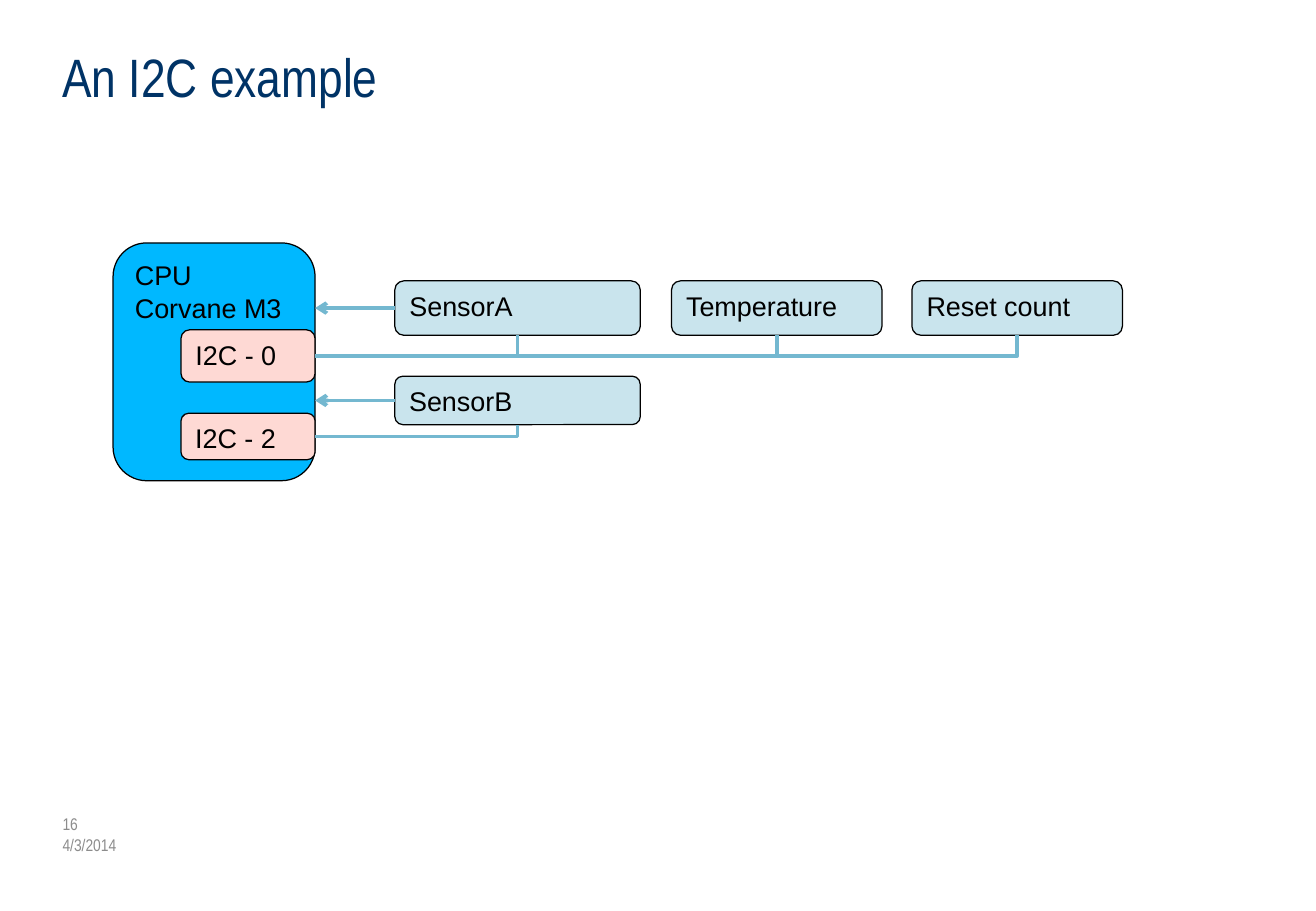
from lxml import etree
from pptx import Presentation
from pptx import util as u
from pptx.dml.color import RGBColor
from pptx.enum import shapes, text
from pptx.oxml import ns

NAVY = RGBColor(0x00, 0x33, 0x66)
GREY = RGBColor(0x8C, 0x8C, 0x8C)
BLACK = RGBColor(0x00, 0x00, 0x00)
CPU_BLUE = RGBColor(0x00, 0xB8, 0xFF)
DEVICE_BLUE = RGBColor(0xC9, 0xE4, 0xED)
PORT_PINK = RGBColor(0xFE, 0xD9, 0xD4)
WIRE_BLUE = RGBColor(0x74, 0xB8, 0xD0)

deck = Presentation()
deck.slide_width, deck.slide_height = u.Pt(780), u.Pt(540)
page = deck.slides.add_slide(deck.slide_layouts[6])


def write(box, lines, anchor, font, spacing=None):
    frame = box.text_frame
    frame.word_wrap = True
    frame.vertical_anchor = anchor
    for index, line in enumerate(lines):
        para = frame.paragraphs[0] if index == 0 else frame.add_paragraph()
        para.alignment = text.PP_ALIGN.LEFT
        para.line_spacing = spacing
        span = para.add_run()
        span.text = line
        span.font.color.rgb = font["color"]
        for name in ("name", "size"):
            setattr(span.font, name, font[name])


def wire(kind, start, end):
    line = page.shapes.add_connector(kind, *map(u.Pt, start + end))
    line.line.color.rgb = WIRE_BLUE
    line.line.width = u.Pt(2.25)
    etree.SubElement(line._element.spPr, ns.qn("a:effectLst"))
    return line


title_font = {"name": "Arial Narrow", "size": u.Pt(32), "color": NAVY}
footer_font = {"name": "Arial Narrow", "size": u.Pt(10), "color": GREY}
label_font = {"name": "Arial", "size": u.Pt(16), "color": BLACK}

for lines, place, font, spacing in (
    (["An I2C example"], (30, 21, 720, 53), title_font, 0.9),
    (["16", "4/3/2014"], (30, 476.6, 156, 36), footer_font, None),
):
    box = page.shapes.add_textbox(*map(u.Pt, place))
    write(box, lines, text.MSO_ANCHOR.MIDDLE, font, spacing)

cpu = (67, 144, 119.75, 141)
sensor_a = (234, 166.5, 145.5, 32.25)
sensor_b = (234, 223, 145.5, 28.75)
temperature = (398, 166.5, 124.75, 32.25)
reset_count = (540.5, 166.5, 124.75, 32.25)
port_0 = (107.25, 195.5, 79.5, 31)
port_2 = (107.25, 245, 79.5, 27.5)

for lines, place, color in (
    (["CPU", "Corvane M3"], cpu, CPU_BLUE),
    (["SensorA"], sensor_a, DEVICE_BLUE),
    (["SensorB"], sensor_b, DEVICE_BLUE),
    (["Temperature"], temperature, DEVICE_BLUE),
    (["Reset count"], reset_count, DEVICE_BLUE),
    (["I2C - 0"], port_0, PORT_PINK),
    (["I2C - 2"], port_2, PORT_PINK),
):
    box = page.shapes.add_shape(shapes.MSO_SHAPE.ROUNDED_RECTANGLE, *map(u.Pt, place))
    box.shadow.inherit = False
    box.fill.solid()
    box.fill.fore_color.rgb = color
    box.line.color.rgb = BLACK
    box.line.width = u.Pt(0.75)
    write(box, lines, text.MSO_ANCHOR.TOP, label_font)

for port, device in (
    (port_0, sensor_a),
    (port_0, reset_count),
    (port_0, temperature),
    (port_2, sensor_b),
):
    start = (port[0] + port[2], port[1] + port[3] / 2)
    end = (device[0] + device[2] / 2, device[1] + device[3])
    bus = wire(shapes.MSO_CONNECTOR.ELBOW, start, end)
    bus._element.spPr.find(ns.qn("a:prstGeom")).set("prst", "bentConnector2")

for left, top, width, height in (sensor_a, sensor_b):
    middle = top + height / 2
    signal = wire(shapes.MSO_CONNECTOR.STRAIGHT, (left, middle), (cpu[0] + cpu[2], middle))
    etree.SubElement(signal.line._get_or_add_ln(), ns.qn("a:tailEnd"), type="arrow")

deck.save("out.pptx")
